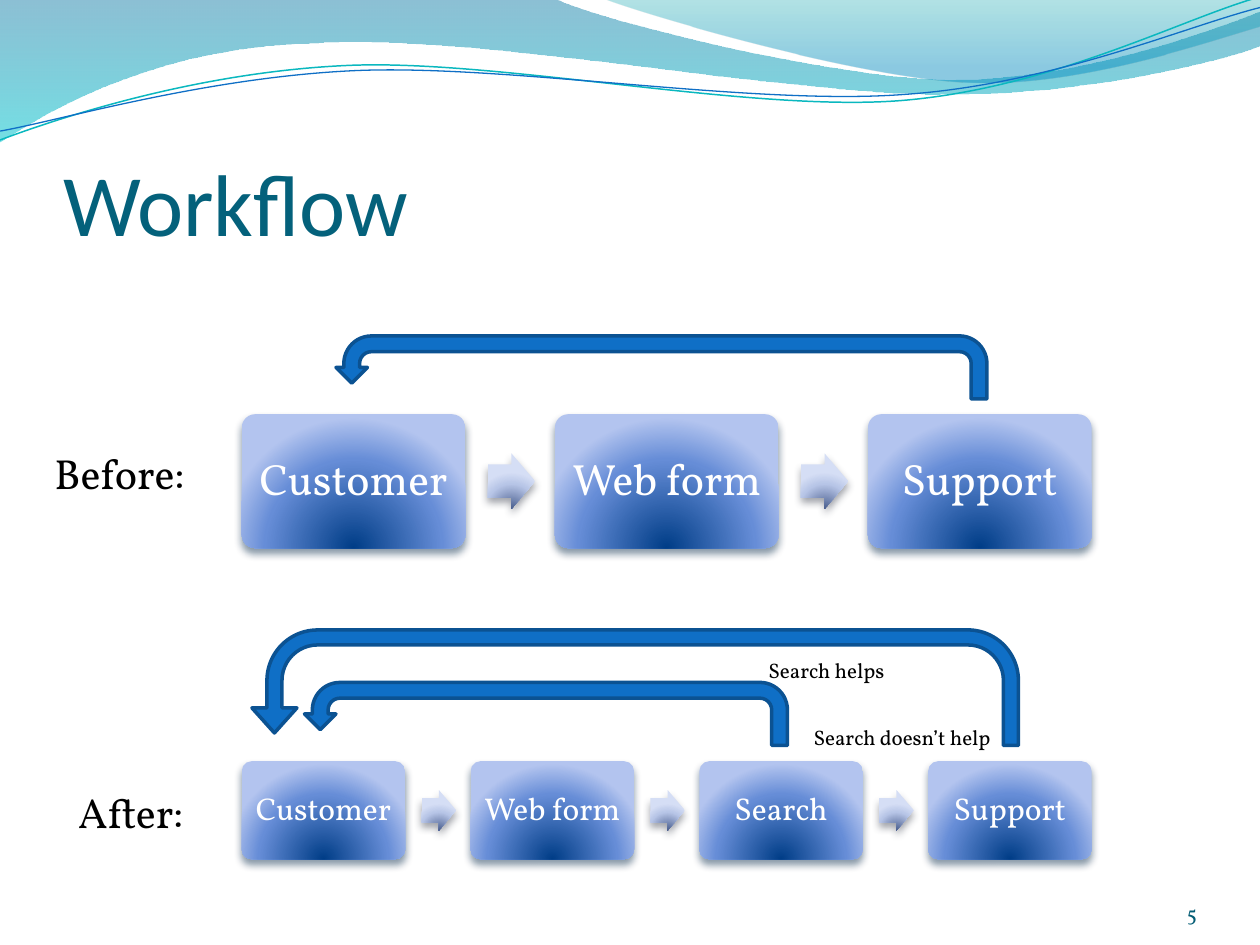
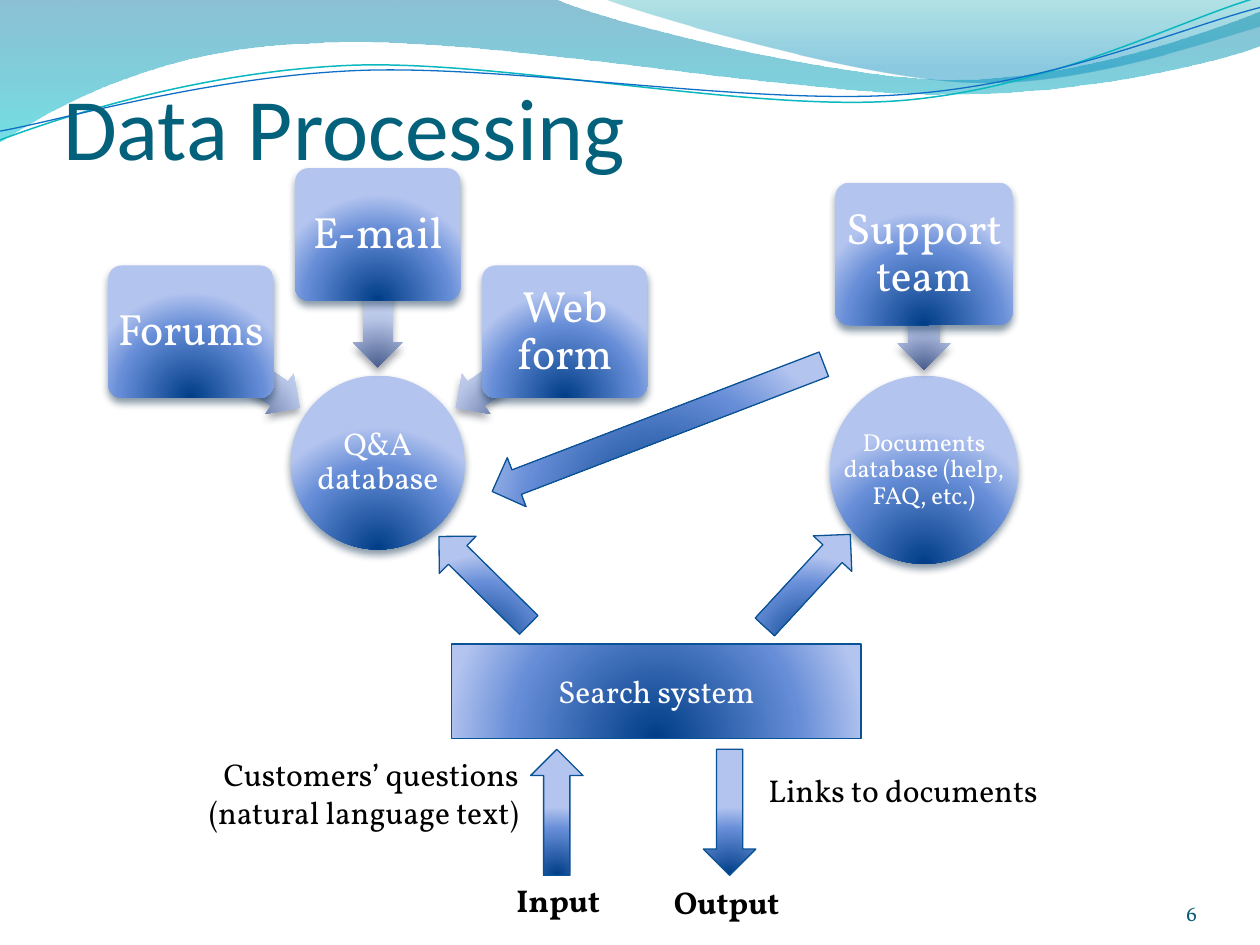
from math import cos, radians, sin

from lxml.etree import SubElement
from pptx import Presentation
from pptx.dml.color import RGBColor
from pptx.enum.shapes import MSO_SHAPE
from pptx.enum.text import MSO_ANCHOR, MSO_AUTO_SIZE, PP_ALIGN
from pptx.oxml.ns import qn
from pptx.util import Pt

BODY_FONT, TITLE_FONT = "Vollkorn", "Calibri"
TITLE, NUMBER, BLACK, WHITE = "04617B", "045D75", "000000", "FFFFFF"
TEAL, BLUE, DARK_BLUE, ARROW_EDGE = "0AB8BF", "0F6FC6", "0B5292", "095295"
NODE_STOPS = [(0, "003D87", 100), (68, "668DD7", 100), (100, "B3C4EF", 100)]
LINK_STOPS = [(0, "4A5F8F", 100), (68, "B7C5E7", 100), (100, "D5DEF5", 100)]
NODE_SHADOW, LINK_SHADOW = "042747", "3C414F"

WAVE_BACK = [[(0, 0)], [(317, -0.7)],
             [(343, 12), (478, 45.4), (546, 45.4)], [(614, 45.4), (690, 18.7), (720, 6.5)],
             [(720.7, 26)], [(708, 31.7), (626, 54.7), (537, 54)],
             [(448, 54), (275, 20), (185, 24.5)], [(93, 26), (33, 60), (-0.7, 81.4)],
             [(0, 0)]]
WAVE_FRONT = [[(345, -0.7)], [(366.5, 8), (491, 44.6), (553.7, 46.8)],
              [(616.3, 49.7), (692, 23), (720, 15)], [(720, 0)], [(345, -0.7)]]
TEAL_CURVE = [[(0, 80)], [(34.6, 67), (113.8, 41), (199.4, 37.4)],
              [(284.4, 33.8), (427, 64), (513.4, 57.6)], [(599.8, 51), (675.4, 10.8), (718.6, -1.4)]]
BLUE_CURVE = [[(0, 74.9)], [(33.8, 69), (118, 44), (203.8, 40.3)],
              [(290.2, 36.7), (430, 60.5), (516.2, 54)], [(602, 48.2), (677.5, 15), (720, 4.3)]]


def color(value):
    return RGBColor.from_string(value)


def add_color(parent, value, alpha):
    clr = SubElement(parent, qn("a:srgbClr"), val=value)
    if alpha < 100:
        SubElement(clr, qn("a:alpha"), val=str(alpha * 1000))


def gradient(sp, stops, linear=False):
    sp.fill.gradient()
    grad = sp._element.spPr.find(qn("a:gradFill"))
    for child in list(grad):
        grad.remove(child)
    grad.set("rotWithShape", "1")
    gs_list = SubElement(grad, qn("a:gsLst"))
    for pos, value, alpha in stops:
        add_color(SubElement(gs_list, qn("a:gs"), pos=str(pos * 1000)), value, alpha)
    if linear:
        SubElement(grad, qn("a:lin"), ang="5400000", scaled="1")
    else:
        route = SubElement(grad, qn("a:path"))
        route.set("path", "circle")
        SubElement(route, qn("a:fillToRect"), l="50000", t="130000", r="50000", b="-30000")


def cast_shadow(sp, value):
    sp.shadow.inherit = False
    effects = sp._element.spPr.find(qn("a:effectLst"))
    shadow = SubElement(effects, qn("a:outerShdw"), blurRad=str(Pt(4.5)),
                        dist=str(Pt(3)), dir="5400000", rotWithShape="0")
    add_color(shadow, value, 48)


def outline(sp, value=None, width=0.75):
    if value:
        sp.line.color.rgb = color(value)
        sp.line.width = Pt(width)
    else:
        sp.line.fill.background()


def write(sp, text, size, value, align=PP_ALIGN.LEFT, anchor=MSO_ANCHOR.TOP, margins=None,
          wrap=True, bold=False, font=BODY_FONT, spacing=None):
    tf = sp.text_frame
    tf.text = text
    tf.word_wrap = wrap
    tf.auto_size = MSO_AUTO_SIZE.NONE if wrap else MSO_AUTO_SIZE.SHAPE_TO_FIT_TEXT
    tf.vertical_anchor = anchor
    if margins:
        tf.margin_left, tf.margin_top, tf.margin_right, tf.margin_bottom = map(Pt, margins)
    for p in tf.paragraphs:
        p.alignment = align
        if spacing:
            p.line_spacing = spacing
        for r in p.runs:
            r.font.name, r.font.size, r.font.bold = font, Pt(size), bold
            r.font.color.rgb = color(value)


def add_text(s, box, text, size, value=BLACK, **style):
    sp = s.shapes.add_textbox(*map(Pt, box))
    write(sp, text, size, value, **style)


def add_label(s, box, text, size, **style):
    add_text(s, box, text, size, wrap=False, **style)


def add_preset(s, kind, box, adjustments=(), rotation=0):
    sp = s.shapes.add_shape(kind, *map(Pt, box))
    sp.shadow.inherit = False
    for i, value in enumerate(adjustments):
        sp.adjustments[i] = value
    sp.rotation = rotation
    return sp


def add_node(s, kind, box, text, size):
    round_rect = kind == MSO_SHAPE.ROUNDED_RECTANGLE
    sp = add_preset(s, kind, box, [0.1] if round_rect else [])
    gradient(sp, NODE_STOPS)
    outline(sp)
    cast_shadow(sp, NODE_SHADOW)
    target = sp if round_rect else s.shapes.add_textbox(*map(Pt, box))
    write(target, text, size, WHITE, PP_ALIGN.CENTER, MSO_ANCHOR.MIDDLE, (1, 1, 1, 1),
          spacing=0.9)


def add_link(s, kind, box, rotation=0):
    sp = add_preset(s, kind, box, [0.6, 0.5], rotation)
    gradient(sp, LINK_STOPS)
    outline(sp)
    cast_shadow(sp, LINK_SHADOW)


def add_block_arrow(s, x, y, length, rotation):
    sp = add_preset(s, MSO_SHAPE.RIGHT_ARROW, (x, y, length, 30), rotation=rotation)
    gradient(sp, NODE_STOPS)
    outline(sp, ARROW_EDGE)


def add_return_arrow(s, box, adjustments=()):
    sp = add_preset(s, MSO_SHAPE.U_TURN_ARROW, box, adjustments)
    sp._element.spPr.xfrm.set("flipH", "1")
    sp.fill.solid()
    sp.fill.fore_color.rgb = color(BLUE)
    outline(sp, DARK_BLUE, 2)


def add_curve(s, segments, close):
    start, *rest = [(Pt(x), Pt(y)) for *_, (x, y) in segments]
    builder = s.shapes.build_freeform(*start)
    builder.add_line_segments(rest, close=close)
    sp = builder.convert_to_shape()
    sp.shadow.inherit = False
    lines = list(sp._element.iter(qn("a:lnTo")))
    for line, segment in zip(lines, segments[1:]):
        if len(segment) == 3:
            line.tag = qn("a:cubicBezTo")
            line.remove(line[0])
            for x, y in segment:
                SubElement(line, qn("a:pt"), x=str(Pt(x) - sp.left), y=str(Pt(y) - sp.top))
    return sp


def add_header_waves(s):
    waves = []
    for points, stops in ((WAVE_BACK, [(0, "0074A1", 45), (100, "00C6CF", 55)]),
                          (WAVE_FRONT, [(0, "00A1A9", 30), (80, "008BBF", 45)])):
        sp = add_curve(s, points, True)
        gradient(sp, stops, linear=True)
        outline(sp)
        waves.append(sp)
    for points, value, width in ((TEAL_CURVE, TEAL, 0.85), (BLUE_CURVE, BLUE, 0.75)):
        sp = add_curve(s, points, False)
        sp.fill.background()
        outline(sp, value, width)
        waves.append(sp)
    for sp in waves:
        s.slide_layout.shapes._spTree.append(sp._element)


def add_slide(prs, title, title_box, number):
    s = prs.slides.add_slide(prs.slide_layouts[5])
    sp = s.shapes.title
    sp.left, sp.top, sp.width, sp.height = map(Pt, title_box)
    write(sp, title, 50, TITLE, anchor=MSO_ANCHOR.BOTTOM, margins=(0, 3.6, 0, 0),
          font=TITLE_FONT)
    add_text(s, (624, 500.2, 60, 28.8), number, 12, NUMBER, align=PP_ALIGN.RIGHT,
             anchor=MSO_ANCHOR.BOTTOM, margins=(0, 0, 0, 0))
    return s


def add_flow(s, box, labels, size):
    left, top, width, height = box
    node_w = width / (1.4 * len(labels) - 0.4)
    link_w, link_h = 0.212 * node_w, 0.248 * node_w
    for i, label in enumerate(labels):
        x = left + 1.4 * node_w * i
        add_node(s, MSO_SHAPE.ROUNDED_RECTANGLE, (x, top, node_w, height), label, size)
        if i < len(labels) - 1:
            add_link(s, MSO_SHAPE.RIGHT_ARROW,
                     (x + 1.1 * node_w, top + (height - link_h) / 2, link_w, link_h))


def add_hub(s, box, label, size, sources, node, link, node_reach, link_reach):
    left, top, width, height = box
    cx, cy = left + width / 2, top + height / 2

    def around(angle, reach, part):
        w, h = part
        return (cx + reach * cos(radians(angle)) - w / 2,
                cy + reach * sin(radians(angle)) - h / 2, w, h)

    add_node(s, MSO_SHAPE.OVAL, box, label, size)
    for angle, source in sources:
        add_link(s, MSO_SHAPE.LEFT_ARROW, around(angle, link_reach, link), angle)
        add_node(s, MSO_SHAPE.ROUNDED_RECTANGLE, around(angle, node_reach, node), source, 25)


def add_search_system(s, box):
    left, top, width, height = box
    sp = add_preset(s, MSO_SHAPE.RECTANGLE, box)
    gradient(sp, NODE_STOPS)
    outline(sp, ARROW_EDGE)
    write(sp, "Search system", 18, WHITE, PP_ALIGN.CENTER, MSO_ANCHOR.MIDDLE)
    for dx, dy, rotation in ((-17.5, -51.2, 224.6), (167.5, -51.2, 312.7),
                             (24.2, 81.2, 270), (122.9, 81.2, 90)):
        add_block_arrow(s, left + dx, top + dy, 72, rotation)
    add_label(s, (left - 152.5, top + 60, 198, 51),
              "Customers’ questions\n(natural language text)", 18, align=PP_ALIGN.RIGHT)
    add_label(s, (left + 174, top + 69, 173, 29), "Links to documents", 18)
    add_label(s, (left + 30, top + 132, 66, 29), "Input", 18, bold=True)
    add_label(s, (left + 120, top + 133, 80.5, 29), "Output", 18, bold=True)


def workflow_slide(prs):
    s = add_slide(prs, "Workflow", (36, 55.3, 648, 90), "5")
    add_header_waves(s)
    add_flow(s, (138.2, 236.7, 485.6, 76.5), ["Customer", "Web form", "Support"], 25)
    add_flow(s, (138.2, 435, 485.6, 56), ["Customer", "Web form", "Search", "Support"], 18)
    add_label(s, (457.8, 410.5, 118, 22), "Search doesn’t help", 12)
    add_label(s, (24, 252, 92, 36), "Before:", 24)
    add_label(s, (37.5, 446, 76.5, 36), "After:", 24)
    add_return_arrow(s, (192, 192, 372, 36))
    add_return_arrow(s, (174, 390, 276, 36))
    add_return_arrow(s, (144, 360, 438, 66), (0.13, 0.195, 0.217, 0.438, 0.892))
    add_label(s, (432, 372, 82, 22), "Search helps", 12)


def data_processing_slide(prs):
    s = add_slide(prs, "Data Processing", (36, 12, 588, 90), "6")
    add_hub(s, (166.2, 214.6, 99.4, 99.4), "Q&A database", 18,
            [(215, "Forums"), (270, "E-mail"), (325, "Web form")],
            (94.4, 75.6), (76, 28), 130.4, 92.5)
    add_hub(s, (474.3, 214.7, 107.5, 107.5), "Documents database (help, FAQ, etc.)", 14,
            [(270, "Support team")], (101.5, 81.4), (66.5, 30), 123.4, 90.5)
    add_search_system(s, (258, 368, 234, 54))
    add_block_arrow(s, 274.5, 229.5, 203, 159)


def main():
    prs = Presentation()
    prs.slide_width, prs.slide_height = Pt(720), Pt(540)
    workflow_slide(prs)
    data_processing_slide(prs)
    prs.save("out.pptx")


if __name__ == "__main__":
    main()
